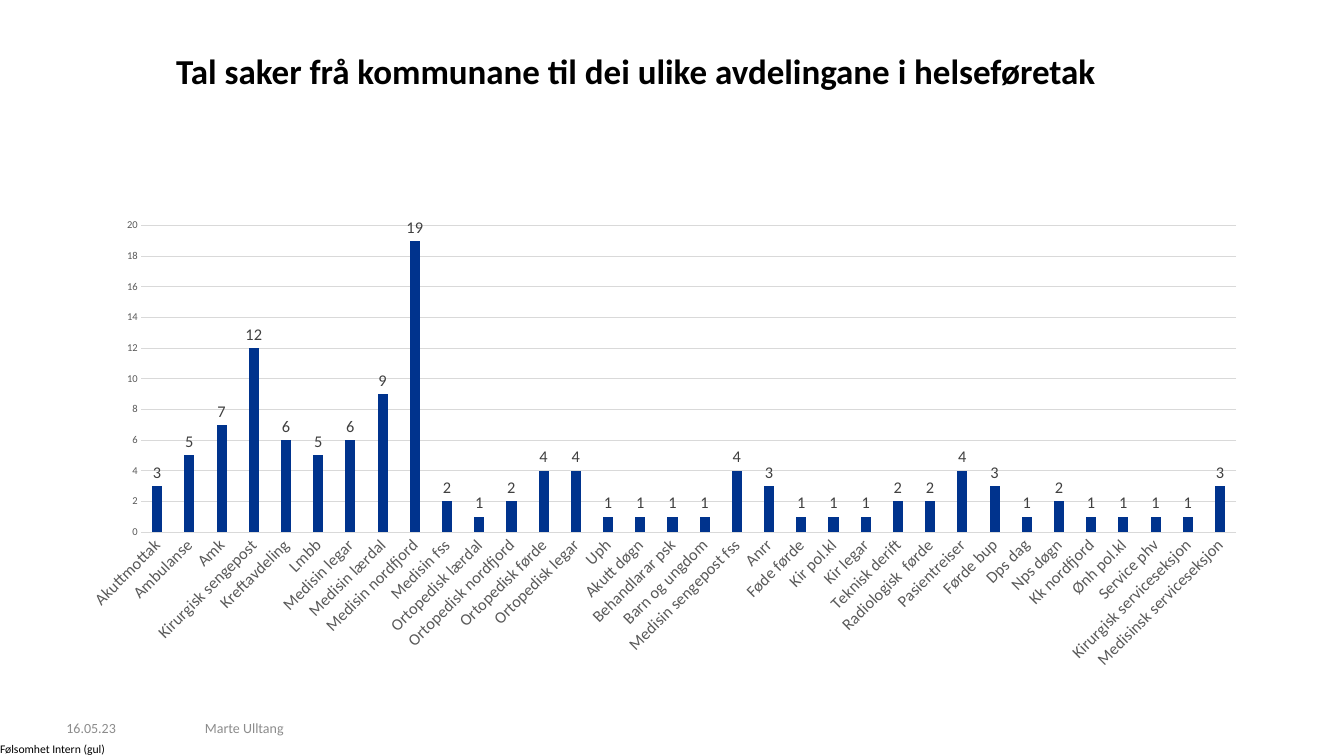
from dataclasses import dataclass

from pptx import Presentation
from pptx import util as u
from pptx.chart import data as chart_data
from pptx.dml import color
from pptx.enum import chart as ch, text


@dataclass(frozen=True)
class Theme:
    font: str = "Calibri"
    black: str = "000000"
    footer: str = "8C8C8C"
    axis: str = "595959"
    value: str = "404040"
    line: str = "D9D9D9"
    bar: str = "00338D"
    title_size: float = 30
    label_size: float = 14
    footer_size: float = 12
    small_size: float = 10
    scale_size: float = 9


T = Theme()


def style_font(font, size, rgb, bold=False):
    font.name, font.size, font.bold = T.font, u.Pt(size), bold
    font.color.rgb = color.RGBColor.from_string(rgb)


def add_text(words, left, top, width, height, size, rgb, bold=False,
             align=text.PP_ALIGN.LEFT, anchor=text.MSO_ANCHOR.TOP,
             spacing=None, wrap=True):
    box = s.shapes.add_textbox(*map(u.Inches, (left, top, width, height)))
    tf = box.text_frame
    tf.margin_left = tf.margin_top = tf.margin_right = tf.margin_bottom = 0
    tf.word_wrap, tf.vertical_anchor = wrap, anchor
    p = tf.paragraphs[0]
    p.alignment, p.line_spacing = align, spacing
    r = p.add_run()
    r.text = words
    style_font(r.font, size, rgb, bold)


prs = Presentation()
prs.slide_width, prs.slide_height = u.Inches(16), u.Inches(9)
s = prs.slides.add_slide(prs.slide_layouts[6])

add_text("Følsomhet Intern (gul)", 0, 8.83, 1.29, 0.17, T.small_size, T.black,
         wrap=False)
for words, left, width in (("Marte Ulltang", 2.44, 9.77), ("16.05.23", 0.79, 1.26)):
    add_text(words, left, 8.54, width, 0.24, T.footer_size, T.footer,
             anchor=text.MSO_ANCHOR.MIDDLE)
add_text("Tal saker frå kommunane til dei ulike avdelingane i helseføretak",
         0.79, 0.65, 13.57, 0.52, T.title_size, T.black, bold=True,
         align=text.PP_ALIGN.CENTER, spacing=u.Pt(32))

cases = {
    "Akuttmottak": 3, "Ambulanse": 5, "Amk": 7, "Kirurgisk sengepost": 12,
    "Kreftavdeling": 6, "Lmbb": 5, "Medisin legar": 6, "Medisin lærdal": 9,
    "Medisin nordfjord": 19, "Medisin fss": 2, "Ortopedisk lærdal": 1,
    "Ortopedisk nordfjord": 2, "Ortopedisk førde": 4, "Ortopedisk legar": 4,
    "Uph": 1, "Akutt døgn": 1, "Behandlarar psk": 1, "Barn og ungdom": 1,
    "Medisin sengepost fss": 4, "Anrr": 3, "Føde førde": 1, "Kir pol.kl": 1,
    "Kir legar": 1, "Teknisk derift": 2, "Radiologisk  førde": 2,
    "Pasientreiser": 4, "Førde bup": 3, "Dps dag": 1, "Nps døgn": 2,
    "Kk nordfjord": 1, "Ønh pol.kl": 1, "Service phv": 1,
    "Kirurgisk serviceseksjon": 1, "Medisinsk serviceseksjon": 3,
}
data = chart_data.CategoryChartData(number_format="General")
data.categories = list(cases)
data.add_series("Series 1", list(cases.values()))
chart = s.shapes.add_chart(
    ch.XL_CHART_TYPE.COLUMN_CLUSTERED, u.Inches(0.79), u.Inches(2.5),
    u.Inches(14.21), u.Inches(5.58), data).chart
chart.has_title = chart.has_legend = False
style_font(chart.font, T.small_size, T.black)

plot = chart.plots[0]
plot.gap_width, plot.overlap, plot.vary_by_categories = 219, -27, False
bars = plot.series[0]
bars.format.fill.solid()
bars.format.fill.fore_color.rgb = color.RGBColor.from_string(T.bar)
bars.invert_if_negative = False
labels = bars.data_labels
labels.show_value = True
labels.position = ch.XL_LABEL_POSITION.OUTSIDE_END
style_font(labels.font, T.label_size, T.value)

departments, scale = chart.category_axis, chart.value_axis
for axis, size in ((departments, T.label_size), (scale, T.scale_size)):
    axis.major_tick_mark = axis.minor_tick_mark = ch.XL_TICK_MARK.NONE
    style_font(axis.tick_labels.font, size, T.axis)
scale.minimum_scale, scale.maximum_scale, scale.major_unit = 0, 20, 2
scale.has_major_gridlines = True
scale.format.line.fill.background()
for line in (departments.format.line, scale.major_gridlines.format.line):
    line.width = u.Pt(0.75)
    line.color.rgb = color.RGBColor.from_string(T.line)

# Slant the department names 45 degrees upwards
departments._element.xpath("c:txPr/a:bodyPr")[0].set("rot", str(-45 * 60000))

prs.save("out.pptx")
